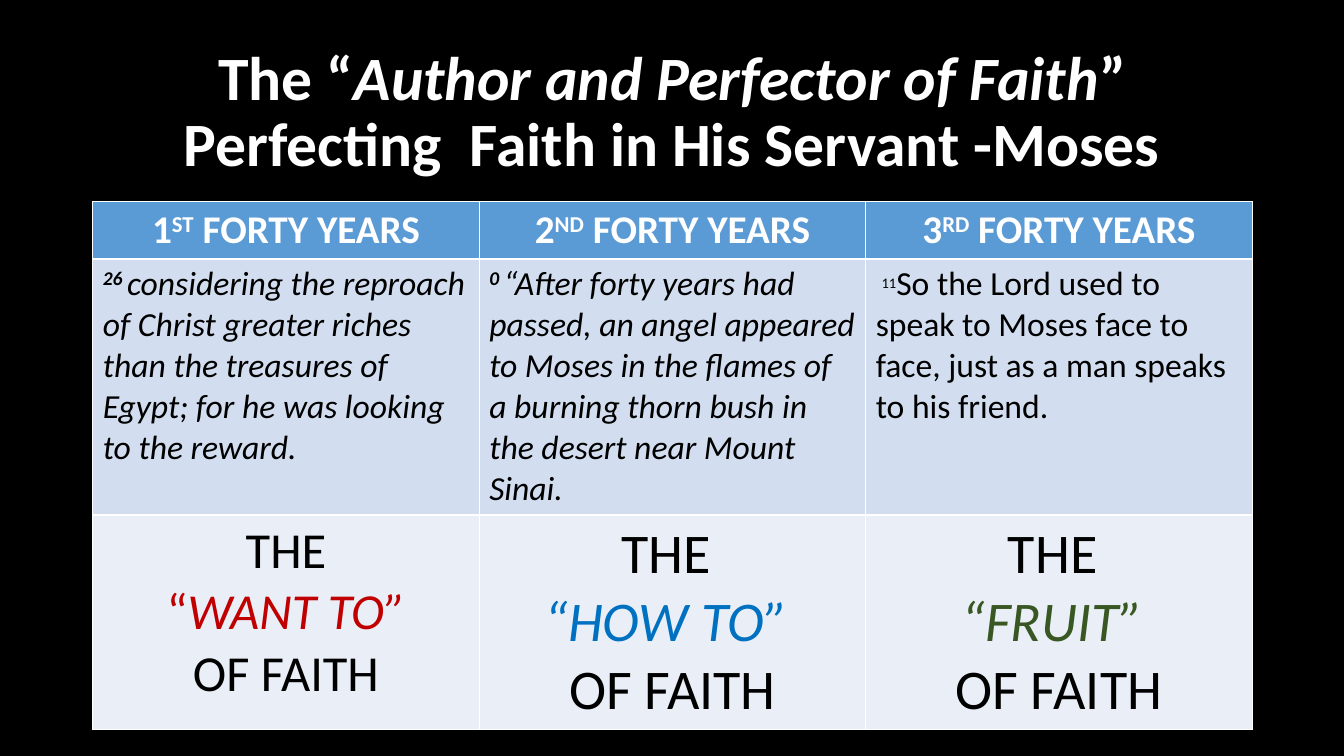
from pptx import Presentation
from pptx.dml.color import RGBColor
from pptx.enum import text as t
from pptx.util import Inches, Pt

BLACK = RGBColor(0x00, 0x00, 0x00)
WHITE = RGBColor(0xFF, 0xFF, 0xFF)
RED = RGBColor(0xC0, 0x00, 0x00)
BLUE = RGBColor(0x00, 0x70, 0xC0)
GREEN = RGBColor(0x38, 0x57, 0x23)
HEAD = RGBColor(0x5B, 0x9B, 0xD5)
BAND = RGBColor(0xD2, 0xDE, 0xEF)
PALE = RGBColor(0xEA, 0xEF, 0xF7)

ROWS = [0.57, 2.54, 2.13]
YEARS = [("1", "ST"), ("2", "ND"), ("3", "RD")]
VERSES = [
    [("26 ", 24, "bis"),
     ("considering the reproach of Christ greater riches than the treasures "
      "of Egypt; for he was looking to the reward.", 24, "i")],
    [("0 ", 24, "bis"),
     ("“After forty years had passed, an angel appeared to Moses in the flames "
      "of a burning thorn bush in the desert near Mount Sinai.", 24, "i")],
    [(" ", 18, ""), ("11", 18, "s"),
     ("So the Lord used to speak to Moses face to face, just as a man speaks "
      "to his friend.", 24, "")],
]
THEMES = [
    (36, RED, "THE", [(" “", ""), ("WANT TO” ", "i")]),
    (40, BLUE, "THE ", [("“HOW TO” ", "i")]),
    (40, GREEN, "THE ", [("“FRUIT” ", "i")]),
]


def add_runs(para, runs, color, center=True):
    if center:
        para.alignment = t.PP_ALIGN.CENTER
    for words, size, style in runs:
        run = para.add_run()
        run.text = words
        font = run.font
        font.name = "Calibri"
        font.size = Pt(size)
        font.color.rgb = color
        font.bold = "b" in style
        font.italic = "i" in style
        if "s" in style:
            font._element.set("baseline", "30000")


def add_title(slide, left, top, width, height):
    box = slide.shapes.add_textbox(
        Inches(left), Inches(top), Inches(width), Inches(height))
    frame = box.text_frame
    frame.word_wrap = True
    frame.vertical_anchor = t.MSO_ANCHOR.MIDDLE
    para = frame.paragraphs[0]
    para.line_spacing = 0.9
    add_runs(para, [
        ("The “", 44, "b"),
        ("Author and Perfector of Faith", 44, "bi"),
        ("” Perfecting  Faith in His Servant -Moses", 44, "b"),
    ], WHITE)


def add_years(slide, left, top, width):
    table = slide.shapes.add_table(
        len(ROWS), len(YEARS), Inches(left), Inches(top),
        Inches(width), Inches(sum(ROWS))).table
    for row, height, fill in zip(table.rows, ROWS, (HEAD, BAND, PALE)):
        row.height = Inches(height)
        for cell in row.cells:
            cell.fill.solid()
            cell.fill.fore_color.rgb = fill

    for col, (number, suffix) in enumerate(YEARS):
        head, verse, theme = (
            table.cell(row, col).text_frame for row in range(len(ROWS)))
        add_runs(head.paragraphs[0], [
            (number, 28, "b"), (suffix, 28, "bs"), (" FORTY YEARS", 28, "b"),
        ], WHITE)
        add_runs(verse.paragraphs[0], VERSES[col], BLACK, center=False)
        size, color, first, quote = THEMES[col]
        add_runs(theme.paragraphs[0], [(first, size, "")], BLACK)
        add_runs(theme.add_paragraph(),
                 [(words, size, style) for words, style in quote], color)
        add_runs(theme.add_paragraph(), [("OF FAITH", size, "")], BLACK)


def main():
    deck = Presentation()
    deck.slide_width = Inches(13.33)
    deck.slide_height = Inches(7.5)
    slide = deck.slides.add_slide(deck.slide_layouts[6])
    slide.background.fill.solid()
    slide.background.fill.fore_color.rgb = BLACK
    add_title(slide, 0.92, 0.4, 11.5, 1.45)
    add_years(slide, 0.92, 2, 11.5)
    deck.save("out.pptx")


if __name__ == "__main__":
    main()
